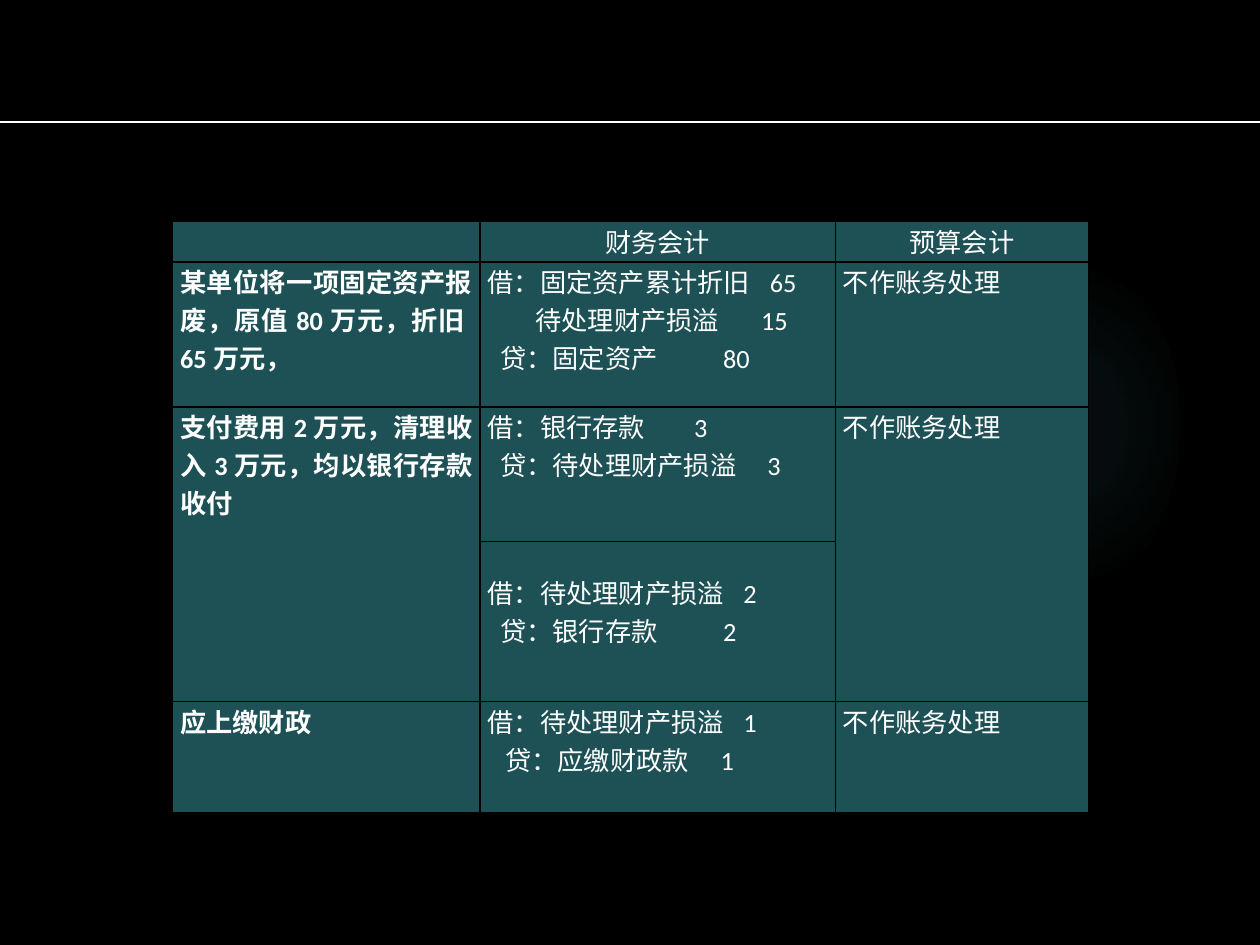
from lxml.etree import SubElement
from pptx import Presentation
from pptx.dml.color import RGBColor
from pptx.enum.shapes import MSO_SHAPE
from pptx.enum.text import PP_ALIGN
from pptx.oxml import parse_xml
from pptx.oxml.ns import nsdecls, qn
from pptx.util import Inches, Pt

BLACK, WHITE, TEAL, GLOW = "000000", "FFFFFF", "1E5155", "50B9C1"
COLUMN_WIDTHS = (2.44, 2.82, 2.01)
ROW_HEIGHTS = (0.32, 1.15, 1.07, 1.27, 0.88)
NO_ENTRY = "不作账务处理"

HEADINGS = ("", "财务会计", "预算会计")
EVENTS = {
    1: "某单位将一项固定资产报废，原值80万元，折旧65万元，",
    2: "支付费用2万元，清理收入3万元，均以银行存款收付",
    4: "应上缴财政",
}
ENTRIES = {
    1: [(0, "借：固定资产累计折旧", 2.24, "65"),
        (0.38, "待处理财产损溢", 2.17, "15"),
        (0.1, "贷：固定资产", 1.87, "80")],
    2: [(0, "借：银行存款", 1.64, "3"),
        (0.1, "贷：待处理财产损溢", 2.22, "3")],
    3: [(0, "借：待处理财产损溢", 2.03, "2"),
        (0.1, "贷：银行存款", 1.87, "2")],
    4: [(0, "借：待处理财产损溢", 2.03, "1"),
        (0.14, "贷：应缴财政款", 1.85, "1")],
}


def color(value):
    return RGBColor.from_string(value)


def add_glow(slide, left, top, width, height):
    glow = slide.shapes.add_shape(
        MSO_SHAPE.OVAL, Inches(left), Inches(top), Inches(width), Inches(height))
    glow.shadow.inherit = False
    glow.line.fill.background()
    glow.fill.background()
    stops = "".join(
        f'<a:gs pos="{position * 1000}"><a:srgbClr val="{GLOW}">'
        f'<a:alpha val="{opacity * 1000}"/></a:srgbClr></a:gs>'
        for position, opacity in ((0, 7), (36, 6), (69, 0)))
    gradient = parse_xml(
        f'<a:gradFill {nsdecls("a")} rotWithShape="1"><a:gsLst>{stops}</a:gsLst>'
        '<a:path path="circle"><a:fillToRect l="50000" t="50000" r="50000" b="50000"/>'
        '</a:path></a:gradFill>')
    properties = glow._element.spPr
    properties.replace(properties.find(qn("a:noFill")), gradient)


def add_rule(slide, left, top, width, height):
    rule = slide.shapes.add_shape(
        MSO_SHAPE.MATH_MINUS, Inches(left), Inches(top), Inches(width), Inches(height))
    rule.shadow.inherit = False
    rule.fill.solid()
    rule.fill.fore_color.rgb = color(WHITE)
    rule.line.fill.background()


def style_cell(cell):
    cell.margin_left = cell.margin_right = Inches(0.06)
    cell.margin_top = cell.margin_bottom = 0
    properties = cell._tc.get_or_add_tcPr()
    for side in ("lnL", "lnR", "lnT", "lnB"):
        border = SubElement(properties, qn(f"a:{side}"), w=str(Pt(1)))
        border_fill = SubElement(border, qn("a:solidFill"))
        SubElement(border_fill, qn("a:srgbClr"), val=BLACK)
    cell.fill.solid()
    cell.fill.fore_color.rgb = color(TEAL)


def write(paragraph, text, align=PP_ALIGN.JUSTIFY, bold=False):
    paragraph.alignment = align
    run = paragraph.add_run()
    run.text = text
    run.font.name = "Calibri"
    run.font.size = Pt(15)
    run.font.bold = bold
    run.font.color.rgb = color(WHITE)


def write_entry(cell, lines):
    frame = cell.text_frame
    for index, (indent, account, amount_at, amount) in enumerate(lines):
        paragraph = frame.add_paragraph() if index else frame.paragraphs[0]
        tabs = SubElement(paragraph._p.get_or_add_pPr(), qn("a:tabLst"))
        for stop in filter(None, (indent, amount_at)):
            SubElement(tabs, qn("a:tab"), pos=str(Inches(stop)), algn="l")
        lead = "\t" if indent else ""
        write(paragraph, f"{lead}{account}\t{amount}")


def add_entries_table(slide, left, top, width, height):
    table = slide.shapes.add_table(
        len(ROW_HEIGHTS), len(COLUMN_WIDTHS),
        Inches(left), Inches(top), Inches(width), Inches(height)).table
    table.first_row = table.horz_banding = False
    for column, share in zip(table.columns, COLUMN_WIDTHS):
        column.width = Inches(width * share / sum(COLUMN_WIDTHS))
    for row, share in zip(table.rows, ROW_HEIGHTS):
        row.height = Inches(height * share / sum(ROW_HEIGHTS))
    for cell in table.iter_cells():
        style_cell(cell)
    for column in (0, 2):
        table.cell(2, column).merge(table.cell(3, column))

    for column, heading in enumerate(HEADINGS):
        if heading:
            write(table.cell(0, column).text_frame.paragraphs[0], heading, PP_ALIGN.CENTER)
    for row, event in EVENTS.items():
        write(table.cell(row, 0).text_frame.paragraphs[0], event, bold=True)
        write(table.cell(row, 2).text_frame.paragraphs[0], NO_ENTRY)
    for row, lines in ENTRIES.items():
        write_entry(table.cell(row, 1), lines)
    table.cell(3, 1).margin_top = Inches(0.25)


def main():
    presentation = Presentation()
    presentation.slide_width = Inches(10)
    presentation.slide_height = Inches(7.5)
    slide = presentation.slides.add_slide(presentation.slide_layouts[6])
    slide.background.fill.solid()
    slide.background.fill.fore_color.rgb = color(BLACK)
    add_glow(slide, 7.06, 1.83, 2.31, 3.08)
    add_rule(slide, -1.85, 0.93, 13.78, 0.08)
    add_entries_table(slide, 1.37, 1.76, 7.27, 4.69)
    presentation.save("out.pptx")


if __name__ == "__main__":
    main()
